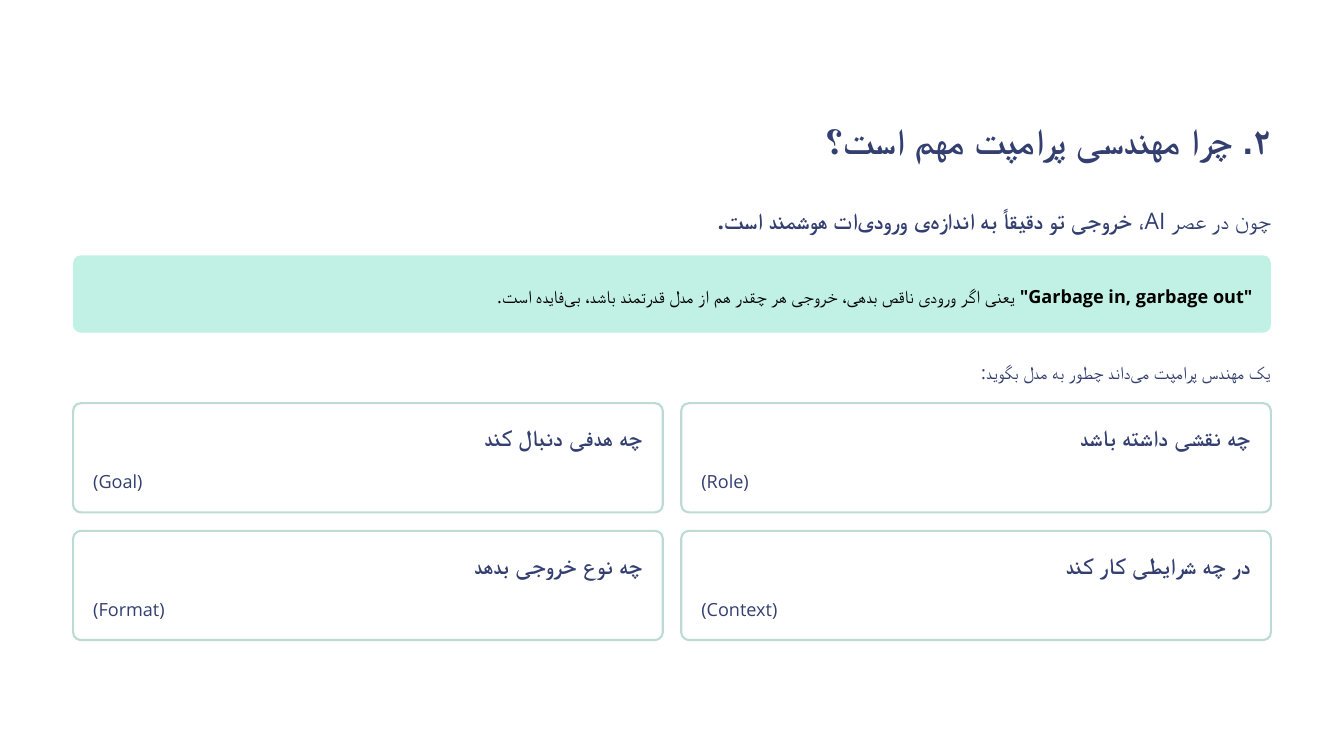
"""Build a Persian slide on why prompt engineering matters."""
from lxml.etree import SubElement
from pptx import Presentation
from pptx.dml.color import RGBColor
from pptx.enum.shapes import MSO_SHAPE as Preset
from pptx.enum.text import PP_ALIGN as Align
from pptx.oxml.ns import qn
from pptx.util import Inches, Pt

COLORS = {"white": "FFFFFF", "navy": "333F70", "mint": "C1F1E5",
          "border": "BCDBD4", "black": "000000"}
LEFT, WIDTH = 0.87, 14.26
CARD_WIDTH, CARD_HEIGHT = 7.02, 1.3
NON_JOINER = chr(0x200C)

presentation = Presentation()
presentation.slide_width, presentation.slide_height = Inches(16), Inches(9)
slide = presentation.slides.add_slide(presentation.slide_layouts[6])
slide.background.fill.solid()
slide.background.fill.fore_color.rgb = RGBColor.from_string(COLORS["white"])


def add_panel(box, radius, fill, border=None):
    shape = slide.shapes.add_shape(Preset.ROUNDED_RECTANGLE, *map(Inches, box))
    shape.shadow.inherit = False
    shape.adjustments[0] = radius
    shape.fill.solid()
    shape.fill.fore_color.rgb = RGBColor.from_string(COLORS[fill])
    if border:
        shape.line.color.rgb = RGBColor.from_string(COLORS[border])
        shape.line.width = Pt(1.8)
    else:
        shape.line.fill.background()


def add_text(box, runs, size, spacing, typeface="Open Sans", color="navy", rtl=True):
    frame = slide.shapes.add_textbox(*map(Inches, box)).text_frame
    frame.word_wrap = False
    for side in ("left", "top", "right", "bottom"):
        setattr(frame, f"margin_{side}", 0)
    paragraph = frame.paragraphs[0]
    paragraph.line_spacing = Pt(spacing)
    paragraph.alignment = Align.RIGHT if rtl else Align.LEFT
    if rtl:
        paragraph._p.get_or_add_pPr().set("rtl", "1")
    for text, bold in runs:
        run = paragraph.add_run()
        run.text = text
        for name, value in {"size": Pt(size), "bold": bold, "name": typeface}.items():
            setattr(run.font, name, value)
        run.font.color.rgb = RGBColor.from_string(COLORS[color])
        SubElement(run.font._element, qn("a:cs")).set("typeface", typeface)


add_text((9.19, 1.38, 5.94, 0.54), [("۲. چرا مهندسی پرامپت مهم است؟", True)],
         31, 39, "Arial")
add_text((LEFT, 2.36, WIDTH, 0.43),
         [("چون در عصر AI، ", False),
          (f"خروجی تو دقیقاً به اندازه{NON_JOINER}ی ورودی{NON_JOINER}ات هوشمند است.", True)],
         19.5, 31)
add_panel((LEFT, 3.04, WIDTH, 0.92), 0.1, "mint")
add_text((1.57, 3.31, 13.34, 0.35),
         [('"Garbage in, garbage out"', True),
          (" یعنی اگر ورودی ناقص بدهی، خروجی هر چقدر هم از مدل قدرتمند باشد، "
           f"بی{NON_JOINER}فایده است.", False)],
         15.5, 25, color="black")
add_text((LEFT, 4.21, WIDTH, 0.35),
         [(f"یک مهندس پرامپت می{NON_JOINER}داند چطور به مدل بگوید:", False)], 15.5, 25)

cards = [("چه نقشی داشته باشد", "(Role)"), ("چه هدفی دنبال کند", "(Goal)"),
         ("در چه شرایطی کار کند", "(Context)"), ("چه نوع خروجی بدهد", "(Format)")]
for index, (heading, label) in enumerate(cards):
    row, column = divmod(index, 2)
    left = LEFT + (1 - column) * (WIDTH - CARD_WIDTH)
    top = 4.8 + row * 1.52
    add_panel((left, top, CARD_WIDTH, CARD_HEIGHT), 0.07, "white", "border")
    add_text((left + 4.07, top + 0.24, 2.71, 0.34), [(heading, True)], 19.5, 24, "Arial")
    add_text((left + 0.24, top + 0.71, 6.54, 0.35), [(label, False)], 15.5, 25, rtl=False)

presentation.save("out.pptx")
